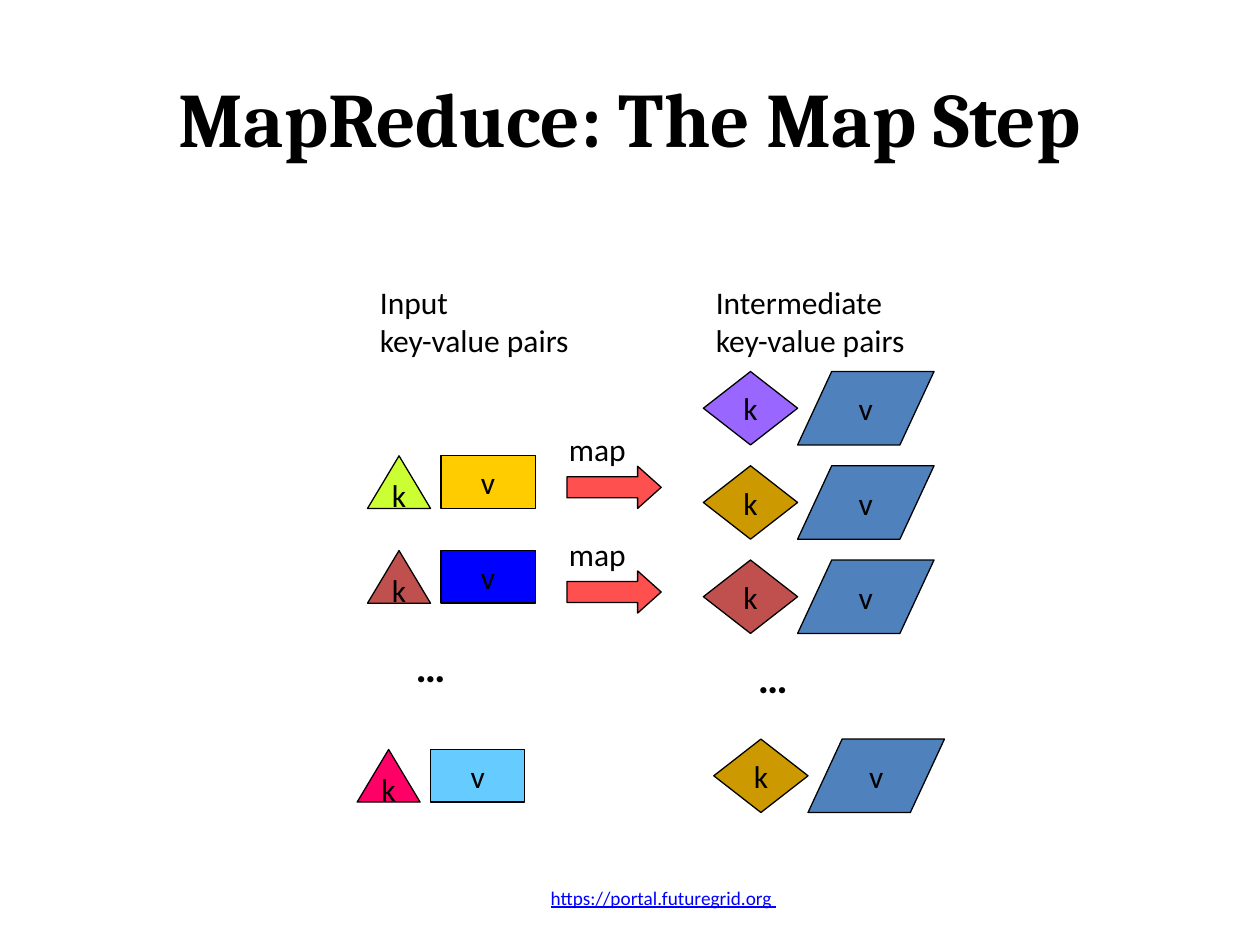
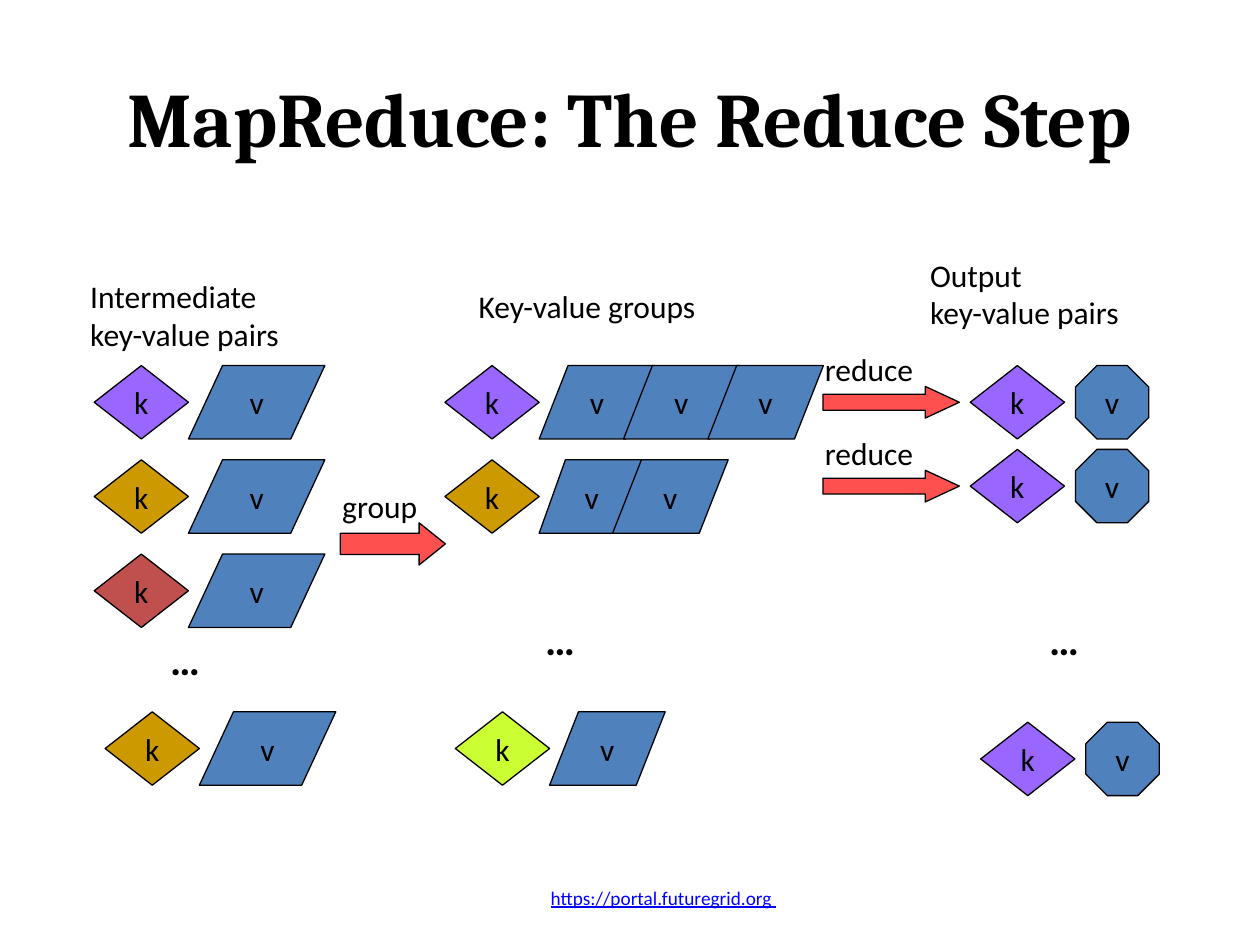
from pptx import Presentation
from pptx.dml.color import RGBColor
from pptx.enum.shapes import MSO_SHAPE
from pptx.enum.text import MSO_ANCHOR, PP_ALIGN
from pptx.util import Cm, Pt

BLACK = RGBColor(0x00, 0x00, 0x00)
LINK_BLUE = RGBColor(0x00, 0x00, 0xFF)
STEEL = RGBColor(0x4F, 0x81, 0xBD)
BRICK = RGBColor(0xC0, 0x50, 0x4D)
VIOLET = RGBColor(0x99, 0x66, 0xFF)
OCHRE = RGBColor(0xCC, 0x99, 0x00)
LIME = RGBColor(0xCC, 0xFF, 0x33)
PINK = RGBColor(0xFF, 0x00, 0x66)
GOLD = RGBColor(0xFF, 0xCC, 0x00)
BLUE = RGBColor(0x00, 0x00, 0xFF)
SKY = RGBColor(0x66, 0xCC, 0xFF)
RED = RGBColor(0xFF, 0x50, 0x50)

BODY_FONT = "Calibri"
TITLE_FONT = "Cambria"
KEY_WIDTH = 1.9
PAIR_HEIGHT = 1.48
ROW_STEP = 1.9
VALUE_WIDTH = 2.75
GROUPED_WIDTH = 2.33


def write(frame, text, size=18, font=BODY_FONT, color=BLACK, bold=False,
          underline=False, align=PP_ALIGN.LEFT, anchor=MSO_ANCHOR.TOP, wrap=True):
    """Fill a text frame, one paragraph per line of text."""
    frame.word_wrap = wrap
    frame.vertical_anchor = anchor
    for index, line in enumerate(text.split("\n")):
        para = frame.paragraphs[0] if index == 0 else frame.add_paragraph()
        para.alignment = align
        span = para.add_run()
        span.text = line
        span.font.size = Pt(size)
        span.font.name = font
        span.font.color.rgb = color
        span.font.bold = bold
        span.font.underline = underline


def add_text(page, text, left, top, width, height, **style):
    """Place a text box with formatted text."""
    box = page.shapes.add_textbox(Cm(left), Cm(top), Cm(width), Cm(height))
    write(box.text_frame, text, **style)


def add_heading(page, text, left, top, height=1.78):
    """Place the heading of a column."""
    add_text(page, text, left, top, 5.6, height)


def add_ellipsis(page, left, top):
    """Mark the rows left out of a column."""
    add_text(page, "…", left, top, 1.4, 1.27, size=24, bold=True)


def add_figure(page, kind, left, top, width, height, fill, text=""):
    """Place an outlined preset shape, with an optional centred letter."""
    figure = page.shapes.add_shape(kind, Cm(left), Cm(top), Cm(width), Cm(height))
    figure.shadow.inherit = False
    figure.fill.solid()
    figure.fill.fore_color.rgb = fill
    figure.line.color.rgb = BLACK
    figure.line.width = Pt(0.75)
    if text:
        write(figure.text_frame, text, align=PP_ALIGN.CENTER,
              anchor=MSO_ANCHOR.MIDDLE, wrap=False)
    return figure


def add_input_pair(page, left, top, key_fill, value_fill):
    """Place a triangle key beside a rectangle value."""
    add_figure(page, MSO_SHAPE.ISOSCELES_TRIANGLE, left, top, 1.27, 1.06, key_fill, "k")
    add_figure(page, MSO_SHAPE.RECTANGLE, left + 1.48, top, 1.9, 1.06, value_fill, "v")


def add_key(page, left, top, fill):
    """Place a diamond key."""
    add_figure(page, MSO_SHAPE.DIAMOND, left, top, KEY_WIDTH, PAIR_HEIGHT, fill, "k")


def add_value(page, left, top, width):
    """Place a parallelogram value whose slant is a quarter of its width."""
    value = add_figure(page, MSO_SHAPE.PARALLELOGRAM, left, top, width,
                       PAIR_HEIGHT, STEEL, "v")
    value.adjustments[0] = width / PAIR_HEIGHT / 4


def add_group(page, left, top, fill, widths=(VALUE_WIDTH,), step=0):
    """Place a key followed by its overlapping values."""
    add_key(page, left, top, fill)
    for index, width in enumerate(widths):
        add_value(page, left + KEY_WIDTH + index * step, top, width)


def add_intermediate_rows(page, left, top):
    """Place the heading and first three intermediate pairs."""
    for row, fill in enumerate((VIOLET, OCHRE, BRICK)):
        add_group(page, left, top + row * ROW_STEP, fill)


def add_output_pair(page, left, top):
    """Place a key beside an octagon value."""
    add_key(page, left, top, VIOLET)
    add_figure(page, MSO_SHAPE.OCTAGON, left + 2.12, top, PAIR_HEIGHT,
               PAIR_HEIGHT, STEEL, "v")


def add_step_arrow(page, label, left, top, width, height):
    """Place a block arrow with its label above."""
    arrow = add_figure(page, MSO_SHAPE.RIGHT_ARROW, left, top, width, height, RED)
    arrow.adjustments[1] = width / height / 4
    add_text(page, label, left - 0.21, top - 0.85, 2.67, 1.02)


def add_page(deck, title):
    """Add a blank slide with the shared title and footer."""
    page = deck.slides.add_slide(deck.slide_layouts[6])
    centred = {"align": PP_ALIGN.CENTER, "anchor": MSO_ANCHOR.MIDDLE}
    add_text(page, "https://portal.futuregrid.org ", 8.74, 17.58, 9.27, 1.02,
             size=11, color=LINK_BLUE, underline=True, **centred)
    add_text(page, title, 1.27, 0.76, 22.86, 3.18, size=44, font=TITLE_FONT,
             bold=True, **centred)
    return page


def build_map_page(deck):
    """Show input pairs mapped to intermediate pairs."""
    page = add_page(deck, "MapReduce: The Map Step")
    add_heading(page, "Input\nkey-value pairs", 7.41, 5.59)
    add_input_pair(page, 7.41, 9.19, LIME, GOLD)
    add_input_pair(page, 7.41, 11.1, BRICK, BLUE)
    add_ellipsis(page, 8.13, 12.78)
    add_input_pair(page, 7.2, 15.11, PINK, SKY)
    for top in (9.4, 11.51):
        add_step_arrow(page, "map", 11.43, top, 1.9, 0.85)
    add_heading(page, "Intermediate\nkey-value pairs", 14.18, 5.59)
    add_intermediate_rows(page, 14.18, 7.49)
    add_ellipsis(page, 15.03, 13)
    add_group(page, 14.39, 14.9, OCHRE)


def build_reduce_page(deck):
    """Show intermediate pairs grouped by key and reduced to output pairs."""
    page = add_page(deck, "MapReduce: The Reduce Step")
    add_heading(page, "Intermediate\nkey-value pairs", 1.57, 5.46)
    add_intermediate_rows(page, 1.9, 7.37)
    add_ellipsis(page, 3.18, 12.65)
    add_group(page, 2.12, 14.35, OCHRE)
    add_step_arrow(page, "group", 6.86, 10.54, 2.12, 0.85)

    add_heading(page, "Key-value groups", 9.4, 5.66, height=1.02)
    add_group(page, 8.97, 7.37, VIOLET, (GROUPED_WIDTH,) * 3, step=1.7)
    add_group(page, 8.97, 7.37 + ROW_STEP, OCHRE, (2.12, GROUPED_WIDTH), step=1.48)
    add_ellipsis(page, 10.74, 12.24)
    add_group(page, 9.18, 14.35, LIME, (GROUPED_WIDTH,))
    for top in (7.79, 9.48):
        add_step_arrow(page, "reduce", 16.59, top, 2.75, 0.64)

    add_heading(page, "Output\nkey-value pairs", 18.5, 5.03)
    for left, top in ((19.56, 7.37), (19.56, 9.06), (19.77, 14.56)):
        add_output_pair(page, left, top)
    add_ellipsis(page, 20.9, 12.24)


def main():
    """Build and save the deck."""
    deck = Presentation()
    deck.slide_width = Cm(25.4)
    deck.slide_height = Cm(19.05)
    build_map_page(deck)
    build_reduce_page(deck)
    deck.save("out.pptx")


if __name__ == "__main__":
    main()
